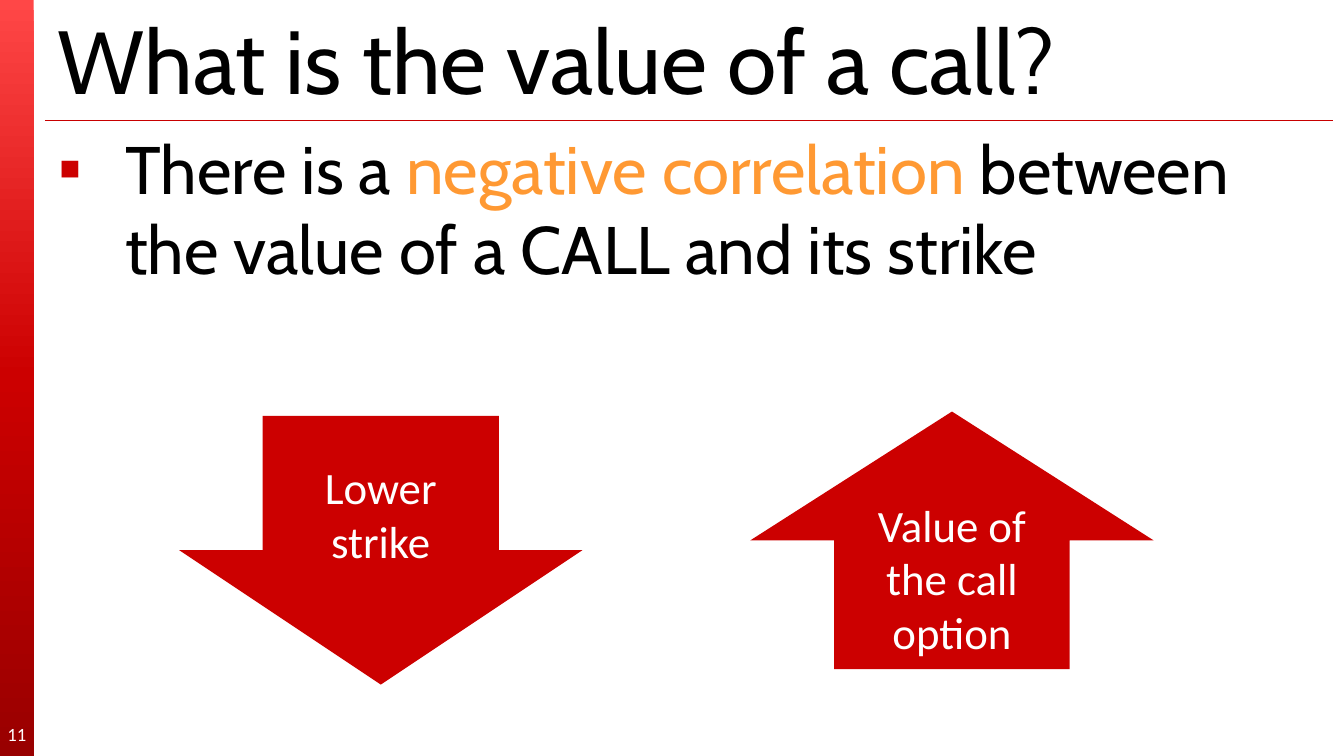
from copy import deepcopy
from dataclasses import dataclass

from lxml.etree import SubElement
from pptx import Presentation
from pptx.dml.color import RGBColor
from pptx.enum.shapes import MSO_CONNECTOR, MSO_SHAPE
from pptx.enum.text import MSO_ANCHOR, PP_ALIGN
from pptx.oxml.ns import qn
from pptx.util import Pt

EMU_PER_PX = 9525


@dataclass(frozen=True)
class Theme:
    """Colours, fonts and type sizes of the slide."""
    red: str = "CC0000"
    rule: str = "C80000"
    accent: str = "FF9933"
    ink: str = "000000"
    paper: str = "FFFFFF"
    bar: tuple = ((0, "FF4747"), (0.5, "CC0000"), (1, "990000"))
    heading_font: str = "Cabin"
    label_font: str = "Calibri"
    title_size: int = 48
    body_size: int = 36
    label_size: int = 24
    number_size: int = 10


THEME = Theme()


def px(*lengths):
    """Turn pixel lengths into EMU."""
    return [length * EMU_PER_PX for length in lengths]


def rgb(value):
    """Turn a hex string into a colour."""
    return RGBColor.from_string(value)


def write(box, *runs, font=THEME.label_font, size=THEME.label_size,
          color=THEME.paper, align=PP_ALIGN.CENTER, anchor=MSO_ANCHOR.MIDDLE,
          inset=None):
    """Write one paragraph of runs, each a string or a (string, colour) pair."""
    frame = box.text_frame
    frame.word_wrap = True
    frame.vertical_anchor = anchor
    if inset is not None:
        frame.margin_left = frame.margin_right = inset
        frame.margin_top = frame.margin_bottom = inset
    para = frame.paragraphs[0]
    para.alignment = align
    for run in runs:
        text, run_color = (run, color) if isinstance(run, str) else run
        span = para.add_run()
        span.text = text
        span.font.name = font
        span.font.size = Pt(size)
        span.font.color.rgb = rgb(run_color)
    return para


def add_bullet(para, mark, color, indent):
    """Give a paragraph a coloured bullet and a hanging indent."""
    properties = para._p.get_or_add_pPr()
    hang, = px(indent)
    properties.set("marL", str(hang))
    properties.set("indent", str(-hang))
    tint = SubElement(properties, qn("a:buClr"))
    SubElement(tint, qn("a:srgbClr"), val=color)
    SubElement(properties, qn("a:buFont"), typeface="Arial")
    SubElement(properties, qn("a:buChar"), char=mark)


def add_block(shapes, kind, *bounds, head=None, turn=0):
    """Add a plain red preset shape."""
    block = shapes.add_shape(kind, *px(*bounds))
    block.shadow.inherit = False
    block.fill.solid()
    block.fill.fore_color.rgb = rgb(THEME.red)
    block.line.fill.background()
    block.rotation = turn
    if head is not None:
        block.adjustments[0], block.adjustments[1] = head
    return block


def add_side_bar(shapes, *bounds):
    """Add the side bar that darkens downwards."""
    bar = add_block(shapes, MSO_SHAPE.RECTANGLE, *bounds)
    bar.fill.gradient()
    bar.fill.gradient_angle = 270
    stop_list = next(bar.element.iter(qn("a:gsLst")))
    stop_list.append(deepcopy(stop_list[0]))
    for stop, (position, color) in zip(bar.fill.gradient_stops, THEME.bar):
        stop.position = position
        stop.color.rgb = rgb(color)


def add_rule(shapes, left, right, top):
    """Add the thin line below the title."""
    rule = shapes.add_connector(MSO_CONNECTOR.STRAIGHT, *px(left, top, right, top))
    rule.line.color.rgb = rgb(THEME.rule)
    rule.line.width = Pt(0.75)
    SubElement(rule.element.spPr, qn("a:effectLst"))


def main():
    """Build and save the slide."""
    deck = Presentation()
    deck.slide_width, deck.slide_height = px(960, 540)
    page = deck.slides.add_slide(deck.slide_layouts[6])
    shapes = page.shapes

    add_side_bar(shapes, 0, 0, 24, 540)
    add_rule(shapes, 32, 952, 86)

    title = shapes.add_textbox(*px(32, 6, 920, 72))
    write(title, "What is the value of a call?", font=THEME.heading_font,
          size=THEME.title_size, color=THEME.ink, align=PP_ALIGN.LEFT)

    body = shapes.add_textbox(*px(32, 86, 896, 416))
    para = write(body, "There is a ", ("negative correlation ", THEME.accent),
                 "between the value of a CALL and its strike",
                 font=THEME.heading_font, size=THEME.body_size, color=THEME.ink,
                 align=PP_ALIGN.LEFT, anchor=MSO_ANCHOR.TOP)
    add_bullet(para, "▪", THEME.red, 48)

    number = shapes.add_textbox(*px(0, 510, 24, 29))
    write(number, "11", size=THEME.number_size, inset=0)

    rise = add_block(shapes, MSO_SHAPE.UP_ARROW, 536, 294, 288, 184, head=(0.584, 0.5))
    write(rise, "Value of the call option")

    fall = shapes.add_group_shape().shapes
    add_block(fall, MSO_SHAPE.UP_ARROW, 128, 297, 288, 192, head=(0.586, 0.5), turn=180)
    label = add_block(fall, MSO_SHAPE.RECTANGLE, 196, 319, 152, 96)
    write(label, "Lower strike")

    deck.save("out.pptx")


if __name__ == "__main__":
    main()
